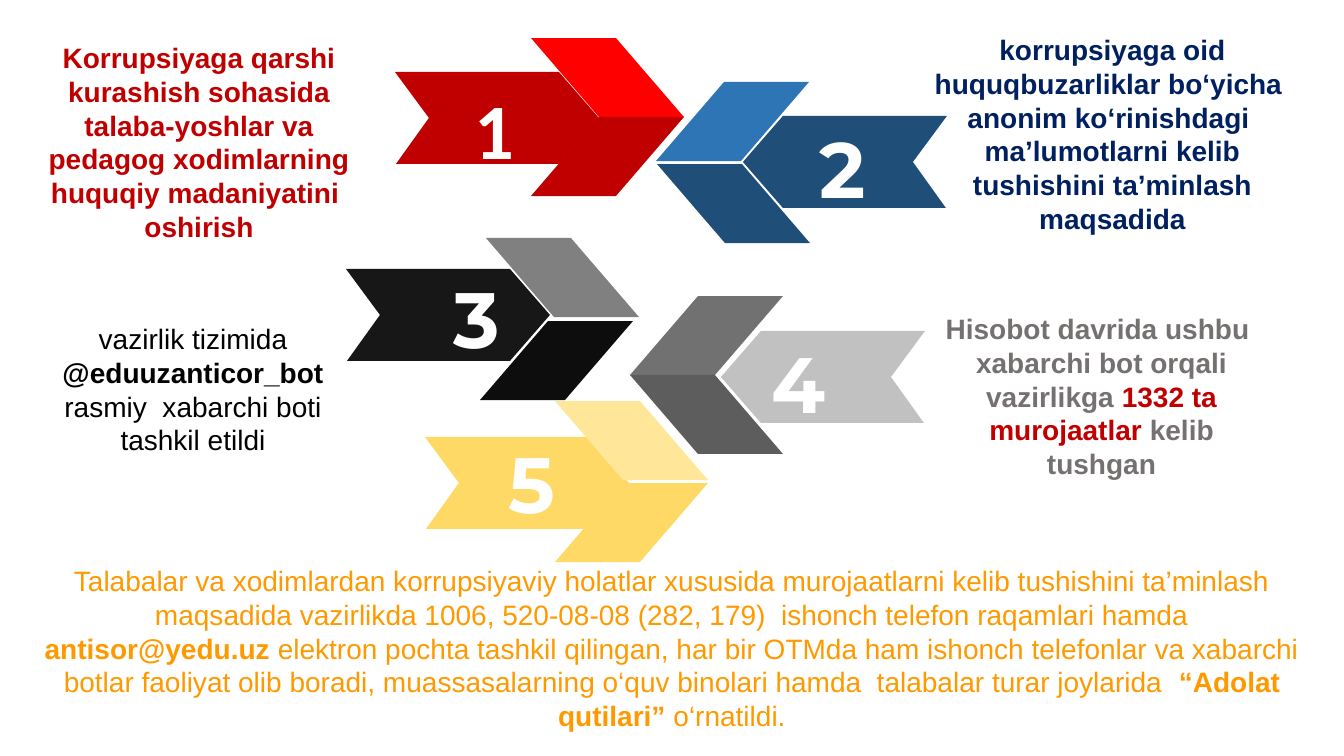
"""Build a slide of five numbered ribbon arrows with explanatory texts."""
import pptx
import pptx.dml.color
import pptx.enum.text
import pptx.util

RGB = pptx.dml.color.RGBColor
PX = 914400 / 100.8
SLIDE = (1344, 756)

WHITE = RGB(0xFF, 0xFF, 0xFF)
BLACK = RGB(0x00, 0x00, 0x00)
NAVY = RGB(0x00, 0x20, 0x60)
GREY = RGB(0x76, 0x71, 0x71)
CRIMSON = RGB(0xC0, 0x00, 0x00)
RED = RGB(0xFF, 0x00, 0x00)
DARK_BLUE = RGB(0x1F, 0x4E, 0x79)
BLUE = RGB(0x2E, 0x75, 0xB6)
CHARCOAL = RGB(0x18, 0x17, 0x17)
INK = RGB(0x0D, 0x0D, 0x0D)
MID_GREY = RGB(0x80, 0x80, 0x80)
SILVER = RGB(0xC1, 0xC1, 0xC1)
STEEL = RGB(0x71, 0x71, 0x71)
SLATE = RGB(0x5D, 0x5D, 0x5D)
GOLD = RGB(0xFF, 0xD9, 0x66)
PALE_GOLD = RGB(0xFF, 0xE6, 0x99)
ORANGE = RGB(0xFF, 0x99, 0x00)

TEXTS = [
    ((914, 28, 397, 214), [
        ("korrupsiyaga oid huquqbuzarliklar bo‘yicha  anonim ko‘rinishdagi  "
         "ma’lumotlarni kelib tushishini ta’minlash maqsadida", NAVY, True)]),
    ((935, 307, 333, 179), [
        ("Hisobot davrida ushbu  xabarchi bot orqali vazirlikga ", GREY, True),
        ("1332 ta murojaatlar", CRIMSON, True),
        (" kelib tushgan", GREY, True)]),
    ((34, 36, 330, 248), [
        ("Korrupsiyaga qarshi kurashish sohasida talaba-yoshlar va pedagog "
         "xodimlarning huquqiy madaniyatini  oshirish", CRIMSON, True)]),
    ((28, 317, 330, 146), [
        ("vazirlik tizimida ", BLACK, False),
        ("@eduuzanticor_bot ", BLACK, True),
        ("rasmiy  xabarchi boti tashkil etildi", BLACK, False)]),
    ((32, 559, 1280, 179), [
        ("Talabalar va xodimlardan korrupsiyaviy holatlar xususida murojaatlarni "
         "kelib tushishini ta’minlash maqsadida vazirlikda 1006, 520-08-08 "
         "(282, 179)  ishonch telefon raqamlari hamda ", ORANGE, False),
        ("antisor@yedu.uz ", ORANGE, True),
        ("elektron pochta tashkil qilingan, har bir OTMda ham ishonch telefonlar "
         "va xabarchi botlar faoliyat olib boradi, muassasalarning o‘quv binolari "
         "hamda  talabalar turar joylarida  ", ORANGE, False),
        ("“Adolat qutilari”", ORANGE, True),
        (" o‘rnatildi.", ORANGE, False)]),
]

RIBBON = [(0, 0), (164, 0), (204, 46), (164, 92), (1, 92), (34, 46)]
UPPER_BLADE = [(0, 0), (85, 0), (153, 79), (68, 79)]
LOWER_BLADE = [(68, 0), (153, 0), (85, 79), (0, 79)]
OUTLINES = [RIBBON, UPPER_BLADE, LOWER_BLADE]

ARROWS = [
    {"points_left": False, "digit": ("1", (475, 81, 38, 80), "Calibri"),
     "parts": [((395, 72), CRIMSON), ((531, 38), RED), ((531, 117), CRIMSON)]},
    {"points_left": True, "digit": ("2", (820, 120, 47, 80), "Montserrat"),
     "parts": [((743, 116), DARK_BLUE), ((656, 82), BLUE), ((657, 164), DARK_BLUE)]},
    {"points_left": False, "digit": ("3", (454, 270, 65, 80), "Montserrat"),
     "parts": [((346, 269), CHARCOAL), ((486, 238), MID_GREY), ((480, 321), INK)]},
    {"points_left": True, "digit": ("4", (772, 335, 95, 80), "Montserrat"),
     "parts": [((721, 331), SILVER), ((630, 296), STEEL), ((630, 375), SLATE)]},
    {"points_left": False, "digit": ("5", (509, 435, 78, 95), "Montserrat"),
     "parts": [((425, 437), GOLD), ((555, 401), PALE_GOLD), ((555, 483), GOLD)]},
]


def emu(px):
    return pptx.util.Emu(round(px * PX))


def add_outline(s, outline, origin, color, mirrored):
    width = max(x for x, y in outline)
    points = [(origin[0] + (width - x if mirrored else x), origin[1] + y)
              for x, y in outline]
    builder = s.shapes.build_freeform(*points[0], scale=PX)
    builder.add_line_segments(points[1:], close=True)
    sp = builder.convert_to_shape()
    sp.shadow.inherit = False
    sp.fill.solid()
    sp.fill.fore_color.rgb = color
    sp.line.fill.background()


def add_text(s, box, runs, font, size, frame_format, align):
    tf = s.shapes.add_textbox(*map(emu, box)).text_frame
    for name, value in frame_format.items():
        setattr(tf, name, value)
    p = tf.paragraphs[0]
    p.alignment = align
    for text, color, bold in runs:
        r = p.add_run()
        r.text = text
        for name, value in {"name": font, "size": pptx.util.Pt(size), "bold": bold}.items():
            setattr(r.font, name, value)
        r.font.color.rgb = color


def main():
    prs = pptx.Presentation()
    prs.slide_width, prs.slide_height = map(emu, SLIDE)
    s = prs.slides.add_slide(prs.slide_layouts[6])
    align = pptx.enum.text.PP_ALIGN
    growing = {"word_wrap": True,
               "auto_size": pptx.enum.text.MSO_AUTO_SIZE.SHAPE_TO_FIT_TEXT}
    no_margins = dict.fromkeys(
        ["margin_left", "margin_top", "margin_right", "margin_bottom"], 0)

    for box, runs in TEXTS:
        add_text(s, box, runs, "Arial", 20, growing, align.CENTER)
    for arrow in ARROWS:
        for outline, (origin, color) in zip(OUTLINES, arrow["parts"]):
            add_outline(s, outline, origin, color, arrow["points_left"])
        digit, box, font = arrow["digit"]
        add_text(s, box, [(digit, WHITE, True)], font, 56, growing | no_margins, align.LEFT)
    prs.save("out.pptx")


if __name__ == "__main__":
    main()
